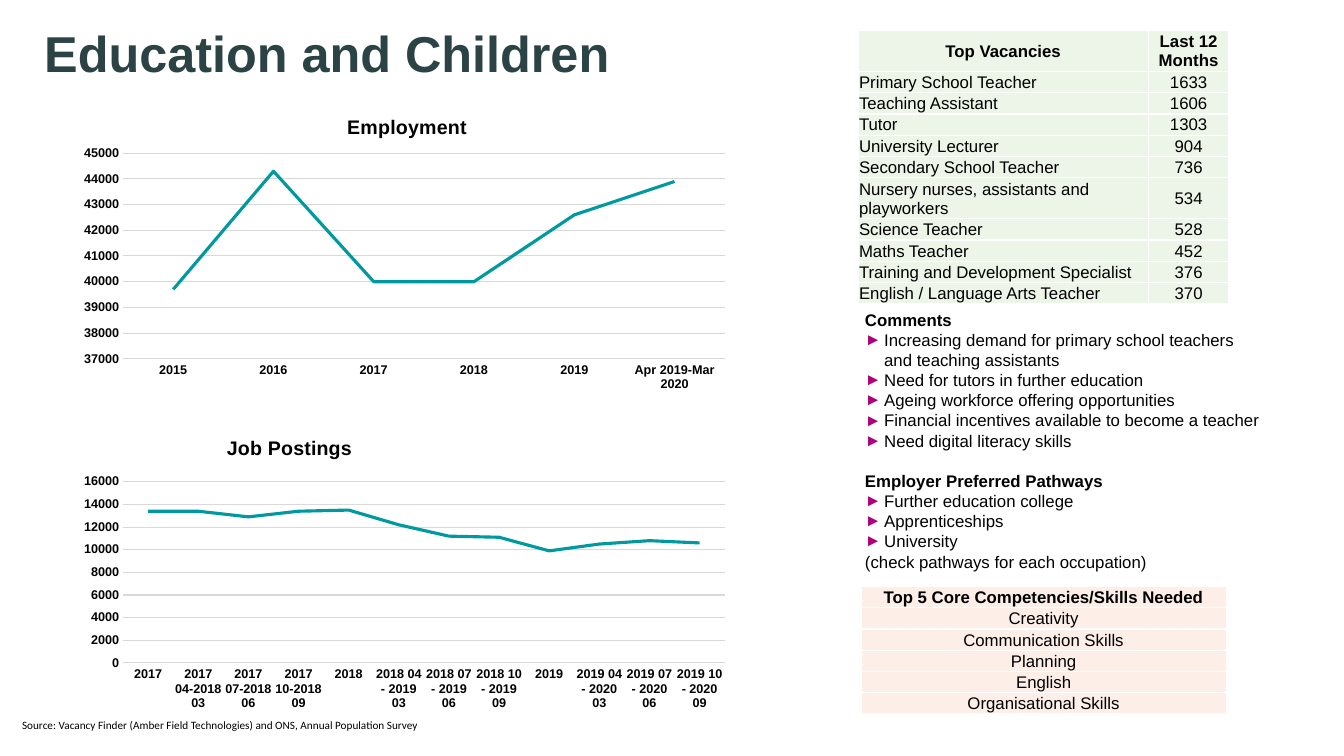
from lxml import etree
from pptx import Presentation
from pptx.chart.data import CategoryChartData
from pptx.dml.color import RGBColor
from pptx.enum.chart import XL_CHART_TYPE as ChartType, XL_TICK_MARK as TickMark
from pptx.enum.text import MSO_ANCHOR as Anchor, PP_ALIGN as Align
from pptx.oxml.ns import qn
from pptx.util import Inches, Pt

BLACK = RGBColor(0x00, 0x00, 0x00)
SLATE = RGBColor(0x2B, 0x43, 0x45)
TEAL = RGBColor(0x00, 0x99, 0xA0)
GRID_GREY = RGBColor(0xD9, 0xD9, 0xD9)
PALE_GREEN = RGBColor(0xED, 0xF4, 0xE8)
PALE_PEACH = RGBColor(0xFD, 0xEE, 0xE8)
MAGENTA = RGBColor(0xAD, 0x00, 0x7A)

WIDTH, HEIGHT = Inches(13.33), Inches(7.5)
ROW = Inches(0.21)
CELL_INSET = Inches(0.01)
BULLET_INDENT = Inches(0.19)

BODY = {"name": "Arial", "size": Pt(12), "bold": False}
HEADING = {**BODY, "bold": True}
TITLE = {"name": "Arial", "size": Pt(36), "bold": True}
SOURCE = {"name": "Calibri", "size": Pt(8), "bold": False}
CHART_TITLE = {"name": "Arial", "size": Pt(14), "bold": True}
AXIS = {"name": "Arial", "size": Pt(9), "bold": True}

TITLE_TEXT = "Education and Children"
SOURCE_TEXT = ("Source: Vacancy Finder (Amber Field Technologies) and ONS, "
               "Annual Population Survey")
NOTES = [
    ("heading", "Comments"),
    ("bullet", "Increasing demand for primary school teachers and teaching assistants"),
    ("bullet", "Need for tutors in further education"),
    ("bullet", "Ageing workforce offering opportunities"),
    ("bullet", "Financial incentives available to become a teacher"),
    ("bullet", "Need digital literacy skills"),
    ("heading", "Employer Preferred Pathways"),
    ("bullet", "Further education college"),
    ("bullet", "Apprenticeships"),
    ("bullet", "University"),
    ("plain", "(check pathways for each occupation)"),
]
VACANCIES = [
    ("Top Vacancies", "Last 12 Months"),
    ("Primary School Teacher", "1633"),
    ("Teaching Assistant", "1606"),
    ("Tutor", "1303"),
    ("University Lecturer", "904"),
    ("Secondary School Teacher", "736"),
    ("Nursery nurses, assistants and playworkers", "534"),
    ("Science Teacher", "528"),
    ("Maths Teacher", "452"),
    ("Training and Development Specialist", "376"),
    ("English / Language Arts Teacher", "370"),
]
SKILLS = [("Top 5 Core Competencies/Skills Needed",), ("Creativity",),
          ("Communication Skills",), ("Planning",), ("English",),
          ("Organisational Skills",)]
CHARTS = [
    {"title": "Employment", "area": (5.18, 12.67, 49.74, 40),
     "title_at": (0.41, 0.05), "plot": (0.08, 0.19, 0.9, 0.68),
     "scale": (37000, 45000, 1000),
     "points": [("2015", 39700), ("2016", 44300), ("2017", 40000),
                ("2018", 40000), ("2019", 42600), ("Apr 2019-Mar 2020", 43900)]},
    {"title": "Job Postings", "area": (5.18, 56, 49.74, 38.67),
     "title_at": (0.23, 0.03), "plot": (0.08, 0.2, 0.9, 0.62),
     "scale": (0, 16000, 2000),
     "points": [("2017", 13400), ("2017 04-2018 03", 13400),
                ("2017 07-2018 06", 12900), ("2017 10-2018 09", 13400),
                ("2018", 13500), ("2018 04 - 2019 03", 12200),
                ("2018 07 - 2019 06", 11200), ("2018 10 - 2019 09", 11100),
                ("2019", 9900), ("2019 04 - 2020 03", 10500),
                ("2019 07 - 2020 06", 10800), ("2019 10 - 2020 09", 10600)]},
]


def place(left, top, width, height):
    return (int(WIDTH * left / 100), int(HEIGHT * top / 100),
            int(WIDTH * width / 100), int(HEIGHT * height / 100))


def style(font, values, colour=BLACK):
    for name, value in values.items():
        setattr(font, name, value)
    font.color.rgb = colour


def add_text(slide, area, anchor=Anchor.TOP):
    frame = slide.shapes.add_textbox(*place(*area)).text_frame
    frame.word_wrap = True
    frame.vertical_anchor = anchor
    return frame


def add_line(slide, area, text, values, colour=BLACK, anchor=Anchor.TOP):
    paragraph = add_text(slide, area, anchor).paragraphs[0]
    paragraph.text = text
    style(paragraph.font, values, colour)


def add_bullet(paragraph):
    properties = paragraph._p.get_or_add_pPr()
    properties.set("marL", str(BULLET_INDENT))
    properties.set("indent", str(-BULLET_INDENT))
    colour = etree.SubElement(properties, qn("a:buClr"))
    etree.SubElement(colour, qn("a:srgbClr"), val=str(MAGENTA))
    etree.SubElement(properties, qn("a:buFont"), typeface="Arial")
    etree.SubElement(properties, qn("a:buChar"), char="►")


def add_notes(slide, area):
    frame = add_text(slide, area)
    for index, (kind, text) in enumerate(NOTES):
        paragraph = frame.add_paragraph() if index else frame.paragraphs[0]
        paragraph.text = text
        if kind == "bullet":
            add_bullet(paragraph)
        elif kind == "heading" and index:
            paragraph.space_before = Pt(14.4)
        style(paragraph.font, HEADING if kind == "heading" else BODY)


def add_grid(slide, left, top, widths, rows, fill):
    x, y, width, _ = place(left, top, sum(widths), 0)
    table = slide.shapes.add_table(len(rows), len(widths), x, y, width,
                                   ROW * len(rows)).table
    table.first_row = table.horz_banding = False
    for column, share in zip(table.columns, widths):
        column.width = int(WIDTH * share / 100)
    for row_index, values in enumerate(rows):
        table.rows[row_index].height = ROW
        for column_index, text in enumerate(values):
            cell = table.cell(row_index, column_index)
            cell.fill.solid()
            cell.fill.fore_color.rgb = fill
            cell.margin_left = cell.margin_right = cell.margin_top = CELL_INSET
            cell.margin_bottom = 0
            cell.vertical_anchor = Anchor.MIDDLE
            paragraph = cell.text_frame.paragraphs[0]
            paragraph.text = text
            is_name = row_index and len(values) > 1 and not column_index
            paragraph.alignment = Align.LEFT if is_name else Align.CENTER
            style(paragraph.font, BODY if row_index else HEADING)


def set_layout(parent, index, shares, inner=False):
    for old in parent.findall(qn("c:layout")):
        parent.remove(old)
    layout = etree.Element(qn("c:layout"))
    manual = etree.SubElement(layout, qn("c:manualLayout"))
    settings = [("layoutTarget", "inner")] if inner else []
    settings += [("xMode", "edge"), ("yMode", "edge")]
    settings += zip("xywh", shares)
    for name, value in settings:
        etree.SubElement(manual, qn(f"c:{name}"), val=str(value))
    parent.insert(index, layout)


def add_line_chart(slide, content):
    data = CategoryChartData()
    names, values = zip(*content["points"])
    data.categories = names
    data.add_series("Series 1", values)
    chart = slide.shapes.add_chart(ChartType.LINE, *place(*content["area"]), data).chart
    chart.has_legend = False
    style(chart.font, AXIS)
    title = chart.chart_title
    paragraph = title.text_frame.paragraphs[0]
    paragraph.text = content["title"]
    style(paragraph.runs[0].font, CHART_TITLE)
    set_layout(title._element, 1, content["title_at"])
    set_layout(chart._chartSpace.find(".//" + qn("c:plotArea")), 0, content["plot"], True)
    for axis in (chart.category_axis, chart.value_axis):
        axis.major_tick_mark = axis.minor_tick_mark = TickMark.NONE
        style(axis.tick_labels.font, AXIS)
    value_axis = chart.value_axis
    value_axis.minimum_scale, value_axis.maximum_scale, value_axis.major_unit = content["scale"]
    value_axis.format.line.fill.background()
    for line in (chart.category_axis.format.line, value_axis.major_gridlines.format.line):
        line.color.rgb, line.width = GRID_GREY, Pt(0.75)
    chart.plots[0].vary_by_categories = False
    series = chart.plots[0].series[0]
    series.smooth = False
    series.format.line.color.rgb = TEAL
    series.format.line.width = Pt(2.25)


def main():
    """Build the education and children labour market slide."""
    presentation = Presentation()
    presentation.slide_width, presentation.slide_height = WIDTH, HEIGHT
    slide = presentation.slides.add_slide(presentation.slide_layouts[6])
    add_line(slide, (2.55, -2.67, 94.97, 19.33), TITLE_TEXT, TITLE, SLATE, Anchor.MIDDLE)
    add_notes(slide, (63.62, 40.27, 31.21, 41.73))
    add_grid(slide, 63.84, 4, (21.6, 6), VACANCIES, PALE_GREEN)
    add_grid(slide, 64.07, 77.6, (27.16,), SKILLS, PALE_PEACH)
    for content in CHARTS:
        add_line_chart(slide, content)
    add_line(slide, (0.9, 94.4, 40.89, 4.93), SOURCE_TEXT, SOURCE)
    presentation.save("out.pptx")


if __name__ == "__main__":
    main()
